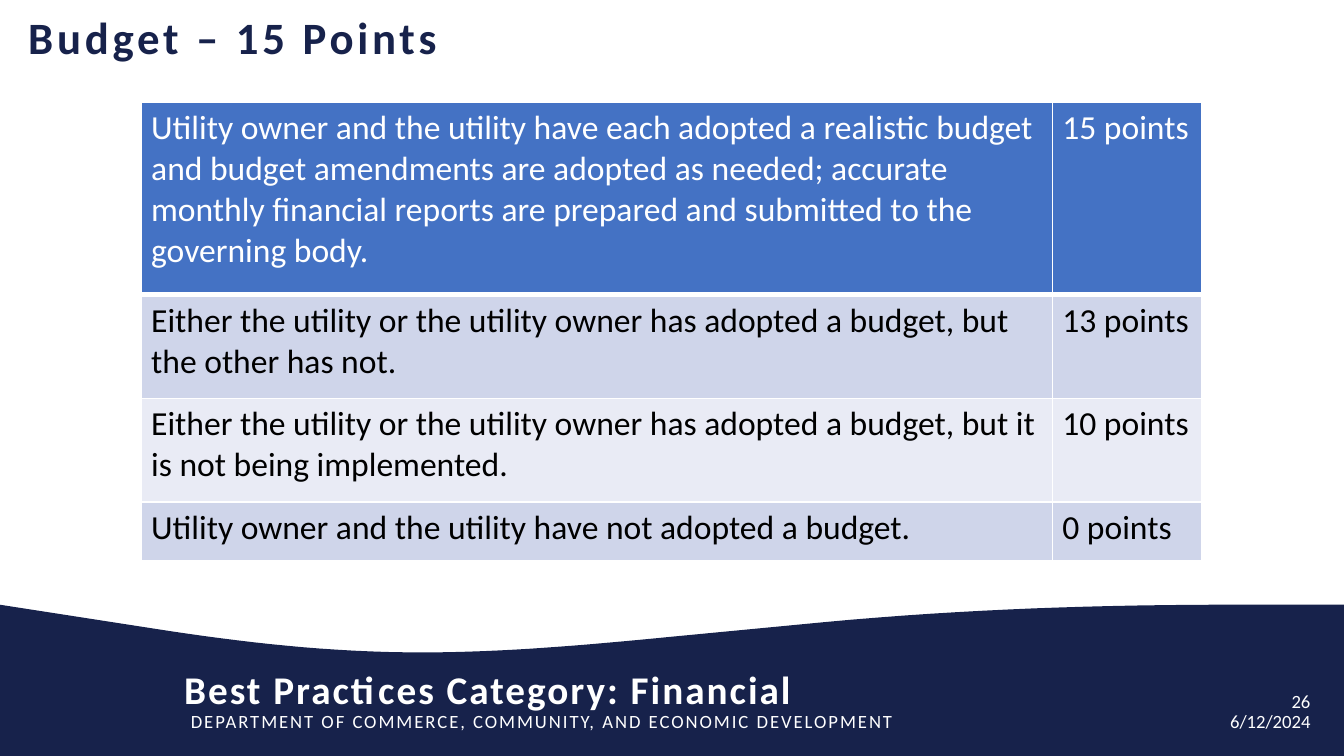
import pptx
import pptx.dml.color
import pptx.enum.text
import pptx.util
from lxml import etree

PX = 4572
NAVY, WHITE, BLACK = "17224B", "FFFFFF", "000000"
LEFT, RIGHT = pptx.enum.text.PP_ALIGN.LEFT, pptx.enum.text.PP_ALIGN.RIGHT
A = "http://schemas.openxmlformats.org/drawingml/2006/main"
ROWS = [
    ("Utility owner and the utility have each adopted a realistic budget and budget "
     "amendments are adopted as needed; accurate monthly financial reports are "
     "prepared and submitted to the governing body.", "15 points"),
    ("Either the utility or the utility owner has adopted a budget, but the other has not.",
     "13 points"),
    ("Either the utility or the utility owner has adopted a budget, but it is not being "
     "implemented.", "10 points"),
    ("Utility owner and the utility have not adopted a budget.", "0 points"),
]


def px(n):
    """Turn px into EMU."""
    return pptx.util.Emu(round(n * PX))


def rgb(value):
    """Turn a hex string into a colour."""
    return pptx.dml.color.RGBColor.from_string(value)


def write(tf, text, size=10, color=WHITE, bold=False, spacing=0, align=LEFT):
    """Write one formatted paragraph into a text frame."""
    tf.word_wrap = True
    p = tf.paragraphs[0]
    p.alignment = align
    r = p.add_run()
    r.text = text
    r.font.name = "Calibri"
    r.font.size = pptx.util.Pt(size)
    r.font.bold = bold
    r.font.color.rgb = rgb(color)
    if spacing:
        r.font._element.set("spc", str(round(spacing * 100)))


def add_text(s, x, y, w, h, text, **fmt):
    """Add a text box without margins."""
    tf = s.shapes.add_textbox(px(x), px(y), px(w), px(h)).text_frame
    tf.margin_left = tf.margin_top = tf.margin_right = tf.margin_bottom = 0
    write(tf, text, **fmt)


def bezier(a, b, c, d, steps=16):
    """Return points along a cubic curve, without its start."""
    ts = [i / steps for i in range(1, steps + 1)]
    return [tuple((1 - t) ** 3 * i + 3 * t * (1 - t) ** 2 * j
                  + 3 * t * t * (1 - t) * k + t ** 3 * m
                  for i, j, k, m in zip(a, b, c, d)) for t in ts]


def add_wave(s, x, y, w, h):
    """Draw the footer band with its wavy top edge."""
    points = [(232, 36)]
    points += bezier((232, 36), (360, 56), (490, 71), (628, 71))
    points += bezier((628, 71), (750, 71), (872, 60), (996, 48))
    points += [(1226, 26)]
    points += bezier((1226, 26), (1440, 6), (1640, 0), (1842, 0))
    points += [(w, 0), (w, h), (0, h)]
    builder = s.shapes.build_freeform(px(x), px(y), 1.0)
    builder.add_line_segments([(px(x + i), px(y + j)) for i, j in points], close=True)
    sp = builder.convert_to_shape()
    sp.shadow.inherit = False
    sp.fill.solid()
    sp.fill.fore_color.rgb = rgb(NAVY)
    sp.line.fill.background()


def add_footer(s, x, y, w, h):
    """Place the footer band with its category, department, number and date."""
    add_wave(s, x, y, w, h)
    add_text(s, x + 274, y + 90, 1250, 70, "Best Practices Category: Financial",
             size=21, bold=True, spacing=1.07)
    add_text(s, x + 284, y + 157, 1220, 34,
             "DEPARTMENT OF COMMERCE, COMMUNITY, AND ECONOMIC DEVELOPMENT", spacing=1.07)
    for left, dy, text in ((1490, 127, "26"), (1782, 157, "6/12/2024")):
        add_text(s, x + left, y + dy, w - 50 - left, 34, text, align=RIGHT)


def set_borders(cell, top, bottom):
    """Give a cell white borders of the given top and bottom widths."""
    tc_pr = cell._tc.get_or_add_tcPr()
    for side, width in (("L", 1), ("R", 1), ("T", top), ("B", bottom)):
        ln = etree.SubElement(tc_pr, f"{{{A}}}ln{side}", w=str(pptx.util.Pt(width)))
        fill = etree.SubElement(ln, f"{{{A}}}solidFill")
        etree.SubElement(fill, f"{{{A}}}srgbClr", val=WHITE)


def add_scores(s, x, y, w, h):
    """Place the table of budget criteria and points."""
    table = s.shapes.add_table(len(ROWS), 2, px(x), px(y), px(w), px(h)).table
    for column, width in zip(table.columns, (w - 223, 223)):
        column.width = px(width)
    for row, height in zip(table.rows, (287, 154, 154, h - 595)):
        row.height = px(height)
    fills = ("4472C4", "CFD5EA", "E9EBF5", "CFD5EA")
    for i, texts in enumerate(ROWS):
        for j, text in enumerate(texts):
            cell = table.cell(i, j)
            cell.margin_left = cell.margin_right = px(15)
            cell.margin_top = cell.margin_bottom = px(8)
            set_borders(cell, 3 if i == 1 else 1, 3 if i == 0 else 1)
            cell.fill.solid()
            cell.fill.fore_color.rgb = rgb(fills[i])
            write(cell.text_frame, text, size=18, color=BLACK if i else WHITE)


def main():
    """Build and save the slide."""
    prs = pptx.Presentation()
    prs.slide_width, prs.slide_height = px(2000), px(1125)
    s = prs.slides.add_slide(prs.slide_layouts[6])
    add_footer(s, 0, 900, 2000, 225)
    add_text(s, 42, 14, 958, 80, "Budget – 15 Points",
             size=24, color=NAVY, bold=True, spacing=2)
    add_scores(s, 210, 152, 1579, 683)
    prs.save("out.pptx")


if __name__ == "__main__":
    main()
